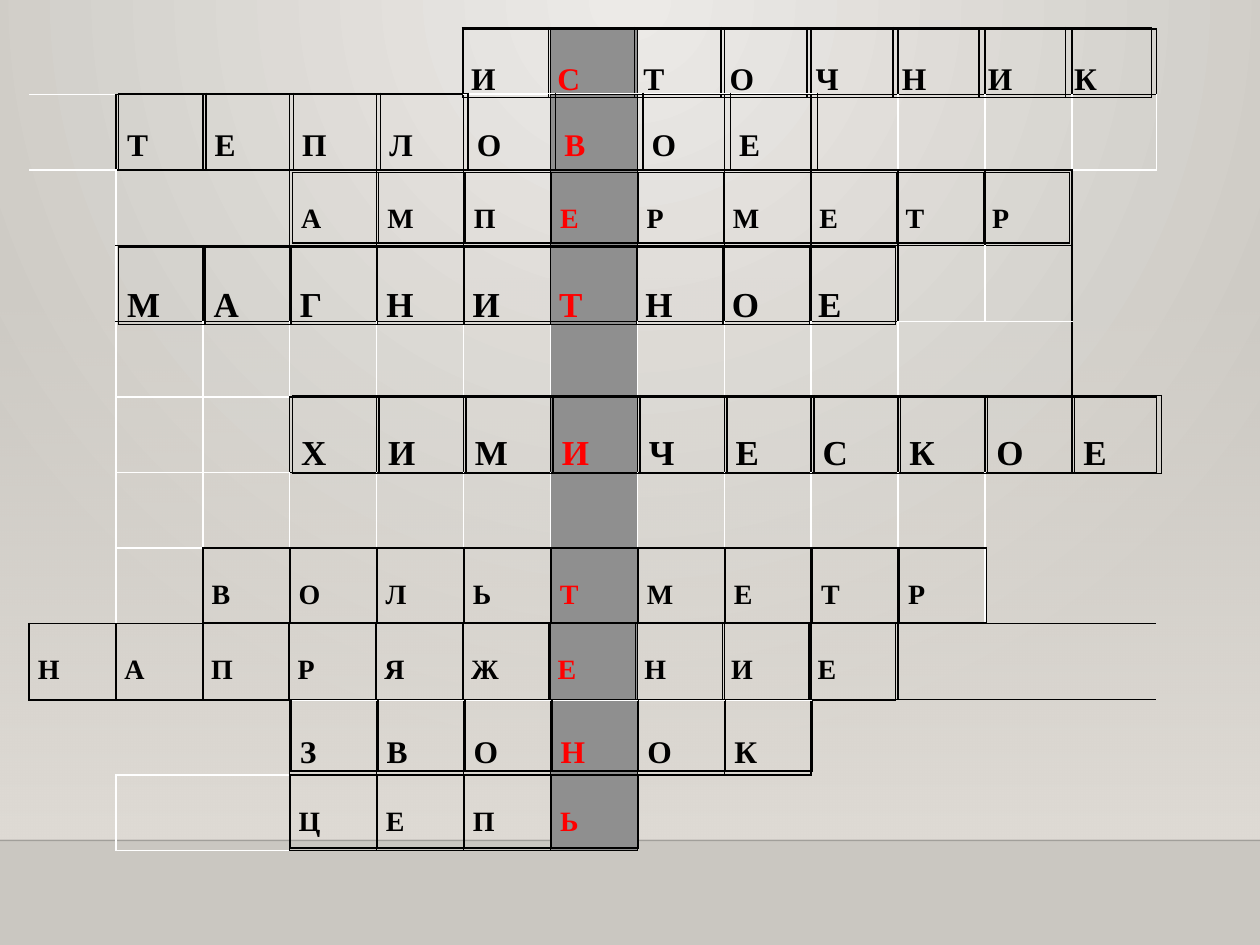
from dataclasses import dataclass

import pptx
import pptx.dml.color
import pptx.enum.shapes
import pptx.oxml.ns
import pptx.util
from lxml import etree

Inches = pptx.util.Inches
Pt = pptx.util.Pt
qn = pptx.oxml.ns.qn

INK, WHITE, RED, GRAY = "000000", "FFFFFF", "FF0000", "8F8F8F"
LINE_COLORS = {"K": INK, "W": WHITE}
ROWS, COLS, KEY_COL = 11, 13, 6


@dataclass
class Region:
    row: int
    col: int
    sides: str
    rows: int = 1
    cols: int = 1
    merged: bool = False


@dataclass
class Word:
    text: str
    key: int
    left: float
    top: float
    width: float
    height: float
    size: int
    white_from: int = 99


REGIONS = [
    Region(0, 0, "--KW", cols=5, merged=True),
    Region(0, 5, "KKKW"),
    Region(1, 0, "-WKW"),
    Region(1, 5, "KWKK"),
    Region(1, 9, "KKWK"),
    Region(1, 10, "WKWK", cols=2),
    Region(1, 12, "WKWW"),
    Region(2, 0, "-WWK", rows=6, merged=True),
    Region(2, 1, "WKKK", cols=2, merged=True),
    Region(2, 12, "KW-K", rows=3, merged=True),
    Region(3, 1, "WKKK"),
    Region(3, 10, "KKWW"),
    Region(3, 11, "WKWW"),
    Region(4, 1, "WKWW", cols=2),
    Region(4, 3, "WKWK", cols=7),
    Region(4, 10, "WWWK", cols=2, merged=True),
    Region(5, 1, "WWWW", rows=2),
    Region(5, 2, "WWKW"),
    Region(6, 2, "WWWK"),
    Region(6, 3, "WKWK", cols=8),
    Region(6, 11, "WKW-", rows=2, cols=2, merged=True),
    Region(7, 1, "WWKK"),
    Region(8, 10, "KK--", cols=3, merged=True),
    Region(9, 0, "-KK-", cols=3, merged=True),
    Region(9, 9, "KK--", cols=4, merged=True),
    Region(10, 0, "--W-"),
    Region(10, 1, "WWKW", cols=2, merged=True),
    Region(10, 7, "KK--", cols=2, merged=True),
    Region(10, 9, "----", cols=4, merged=True),
]

WORDS = [
    Word("ИСТОЧНИК", 1, 3.67, 0.22, 5.47, 0.51, 18),
    Word("ТЕПЛОВОЕ", 5, 0.94, 0.74, 5.55, 0.61, 18, 4),
    Word("АМПЕРМЕТР", 3, 2.32, 1.37, 6.17, 0.56, 16),
    Word("МАГНИТНОЕ", 5, 0.94, 1.96, 6.17, 0.58, 20),
    Word("ХИМИЧЕСКОЕ", 3, 2.32, 3.14, 6.9, 0.61, 20),
    Word("ВОЛЬТМЕТР", 4, 1.61, 4.35, 6.22, 0.59, 16),
    Word("НАПРЯЖЕНИЕ", 6, 0.23, 4.95, 6.88, 0.61, 16),
    Word("ЗВОНОК", 3, 2.31, 5.56, 4.14, 0.56, 18, 0),
    Word("ЦЕПЬ", 3, 2.3, 6.15, 2.77, 0.58, 16),
]


def rgb(color: str) -> pptx.dml.color.RGBColor:
    return pptx.dml.color.RGBColor.from_string(color)


def set_alpha(element, percent: int) -> None:
    for clr in element.iter(qn("a:srgbClr")):
        etree.SubElement(clr, qn("a:alpha"), val=str(percent * 1000))


def set_borders(cell, sides: str) -> None:
    left, top, right, bottom = sides
    tcPr = cell._tc.get_or_add_tcPr()
    for tag, code in (("lnL", left), ("lnR", right), ("lnT", top), ("lnB", bottom)):
        ln = etree.SubElement(tcPr, qn(f"a:{tag}"), w=str(Pt(1)))
        if code in LINE_COLORS:
            fill = etree.SubElement(ln, qn("a:solidFill"))
            etree.SubElement(fill, qn("a:srgbClr"), val=LINE_COLORS[code])
        else:
            etree.SubElement(ln, qn("a:noFill"))


def add_plain_table(s, rows: int, cols: int, left: float, top: float,
                    width: float, height: float):
    table = s.shapes.add_table(rows, cols, Inches(left), Inches(top),
                               Inches(width), Inches(height)).table
    table.first_row = False
    table.horz_banding = False
    return table


def region_borders(region: Region) -> dict:
    borders = {}
    for i in range(region.rows):
        for j in range(region.cols):
            outer = (j == 0, i == 0, j == region.cols - 1, i == region.rows - 1)
            borders[region.row + i, region.col + j] = "".join(
                side if edge or not region.merged else "-"
                for side, edge in zip(region.sides, outer))
    return borders


def draw_grid(s) -> None:
    table = add_plain_table(s, ROWS, COLS, 0.23, 0.23, 8.96, 6.5)
    for i, row in enumerate(table.rows):
        row.height = Inches(0.6 if i else 0.52)
    for j, col in enumerate(table.columns):
        col.width = Inches(0.69 if j < COLS - 1 else 0.67)
    borders = {}
    for region in REGIONS:
        borders.update(region_borders(region))
        if region.merged:
            table.cell(region.row, region.col).merge(
                table.cell(region.row + region.rows - 1, region.col + region.cols - 1))
    for i in range(ROWS):
        for j in range(COLS):
            cell = table.cell(i, j)
            set_borders(cell, borders.get((i, j), "KKKK"))
            if j == KEY_COL:
                cell.fill.solid()
                cell.fill.fore_color.rgb = rgb(GRAY)
            else:
                cell.fill.background()


def draw_word(s, word: Word) -> None:
    table = add_plain_table(s, 1, len(word.text), word.left, word.top,
                            word.width, word.height)
    for j, letter in enumerate(word.text):
        cell = table.cell(0, j)
        cell.margin_left = cell.margin_right = Inches(0.07)
        cell.margin_top = cell.margin_bottom = 0
        set_borders(cell, "KWKK" if j >= word.white_from else "KKKK")
        cell.fill.background()
        p = cell.text_frame.paragraphs[0]
        p.text = letter
        p.line_spacing = 2.0
        font = p.runs[0].font
        font.name = "Times New Roman"
        font.size = Pt(word.size)
        font.bold = True
        font.color.rgb = rgb(RED if j == word.key else INK)


def draw_background(s) -> None:
    fill = s.background.fill
    fill.gradient()
    for stop, color in zip(fill.gradient_stops, ("ECEAE7", "CAC7C1")):
        stop.color.rgb = rgb(color)
    grad = next(s.element.iter(qn("a:gradFill")))
    grad.remove(grad.find(qn("a:lin")))
    circle = etree.SubElement(grad, qn("a:path"), path="circle")
    etree.SubElement(circle, qn("a:fillToRect"), l="43000", t="0", r="43000", b="100000")

    band = s.shapes.add_shape(pptx.enum.shapes.MSO_SHAPE.RECTANGLE, 0, Inches(2.2),
                              Inches(10), Inches(4.46))
    band.shadow.inherit = False
    band.line.fill.background()
    band.fill.gradient()
    band.fill.gradient_angle = 270
    for stop in band.fill.gradient_stops:
        stop.color.rgb = rgb("DFDBD5")
    set_alpha(next(band.element.iter(qn("a:gs"))), 0)

    horizon = s.shapes.add_connector(pptx.enum.shapes.MSO_CONNECTOR.STRAIGHT, 0,
                                     Inches(6.67), Inches(10), Inches(6.67))
    horizon.line.color.rgb = rgb("000001")
    horizon.line.width = Pt(1)
    set_alpha(horizon.element, 20)
    etree.SubElement(horizon.element.spPr, qn("a:effectLst"))


def main() -> None:
    prs = pptx.Presentation()
    prs.slide_width, prs.slide_height = Inches(10), Inches(7.5)
    s = prs.slides.add_slide(prs.slide_layouts[6])
    draw_background(s)
    draw_grid(s)
    for word in WORDS:
        draw_word(s, word)
    prs.save("out.pptx")


if __name__ == "__main__":
    main()
